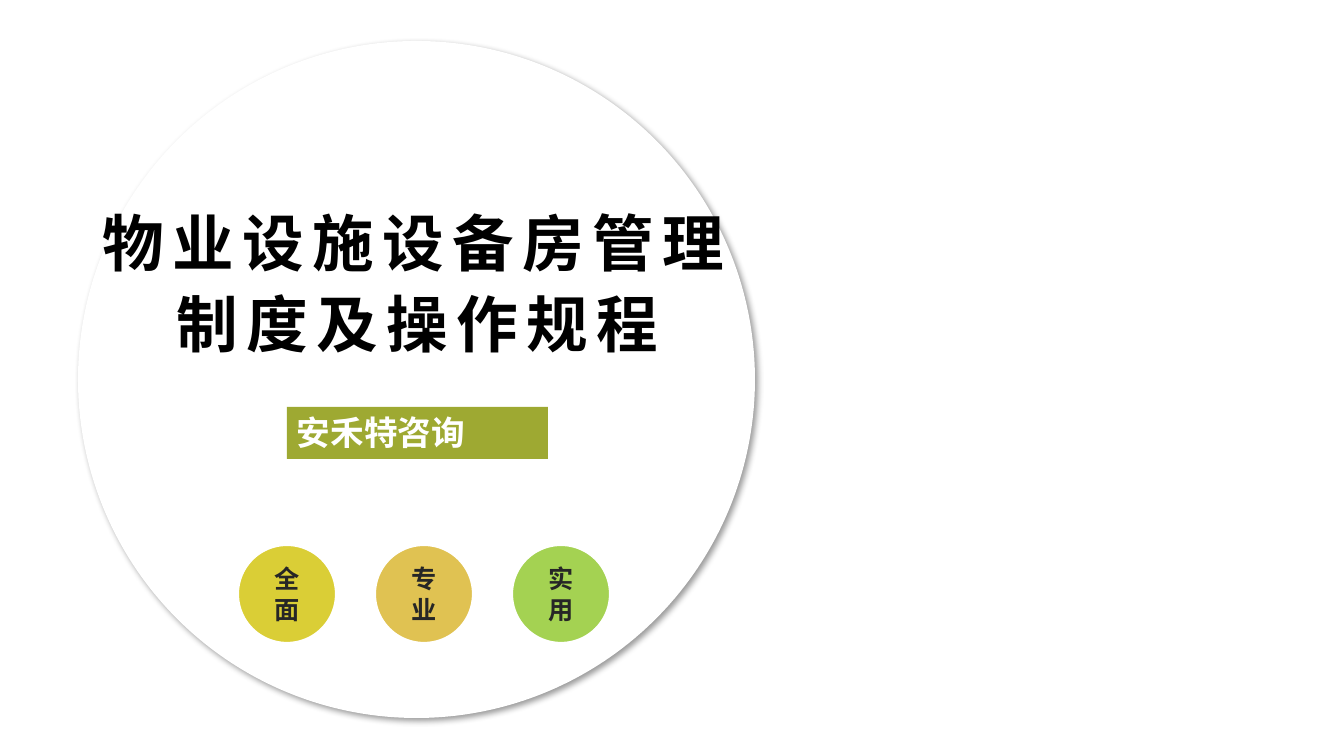
from lxml.etree import SubElement
from pptx import Presentation
from pptx.dml.color import RGBColor
from pptx.enum.shapes import MSO_SHAPE
from pptx.enum.text import MSO_ANCHOR, MSO_AUTO_SIZE, PP_ALIGN
from pptx.oxml.ns import qn
from pptx.util import Emu, Pt

WHITE = RGBColor(0xFF, 0xFF, 0xFF)
BLACK = RGBColor(0x00, 0x00, 0x00)
INK = RGBColor(0x26, 0x26, 0x26)
OLIVE = RGBColor(0x9E, 0xA9, 0x32)
YELLOW = RGBColor(0xDA, 0xCE, 0x36)
AMBER = RGBColor(0xE0, 0xC2, 0x52)
GREEN = RGBColor(0xA4, 0xD2, 0x52)

PX = 914400 / 100.8
WIDTH, HEIGHT = 1344, 756


def emu(px):
    return Emu(round(px * PX))


class Cover:
    head_font = "Noto Sans CJK JP"
    bar_font = "Noto Sans CJK SC"
    dot_font = "Arial"

    def __init__(self, deck):
        self.slide = deck.slides.add_slide(deck.slide_layouts[0])
        self.shapes = self.slide.shapes
        spare = self.slide.placeholders[1].element
        spare.getparent().remove(spare)

    def shape(self, kind, box, fill, line=None):
        shape = self.shapes.add_shape(kind, *map(emu, box))
        shape.shadow.inherit = False
        shape.fill.solid()
        shape.fill.fore_color.rgb = fill
        if line is None:
            shape.line.fill.background()
        else:
            shape.line.color.rgb = line
            shape.line.width = Pt(1.5)
        return shape

    def label(self, shape, text, name, size, color, align, anchor):
        frame = shape.text_frame
        frame.text = text
        frame.word_wrap = True
        frame.auto_size = MSO_AUTO_SIZE.NONE
        frame.vertical_anchor = anchor
        para = frame.paragraphs[0]
        para.alignment = align
        font = para.font
        font.name, font.size, font.bold = name, Pt(size), True
        font.color.rgb = color
        SubElement(font._rPr, qn("a:ea"), typeface=name)
        return para

    def disc(self, box):
        """Add the large white circle with its soft shadow."""
        disc = self.shape(MSO_SHAPE.OVAL, box, WHITE)
        effects = disc.element.spPr.find(qn("a:effectLst"))
        shade = SubElement(
            effects, qn("a:outerShdw"), blurRad=str(Pt(4)), dist=str(Pt(3)),
            dir=str(45 * 60000), algn="tl", rotWithShape="0")
        tone = SubElement(shade, qn("a:srgbClr"), val=str(BLACK))
        SubElement(tone, qn("a:alpha"), val="40000")

    def title(self, text, box):
        title = self.shapes.title
        title.left, title.top, title.width, title.height = map(emu, box)
        title.text_frame.margin_bottom = 0
        para = self.label(title, text, self.head_font, 44, BLACK,
                          PP_ALIGN.CENTER, MSO_ANCHOR.BOTTOM)
        para.line_spacing = 1.1
        para.font._rPr.set("spc", "600")
        self.shapes._spTree.append(title.element)  # in front of the disc

    def bar(self, text, box):
        bar = self.shape(MSO_SHAPE.RECTANGLE, box, OLIVE)
        self.label(bar, text, self.bar_font, 24, WHITE,
                   PP_ALIGN.JUSTIFY, MSO_ANCHOR.TOP)

    def dot(self, text, box, fill):
        dot = self.shape(MSO_SHAPE.OVAL, box, fill, WHITE)
        self.label(dot, text, self.dot_font, 18, INK,
                   PP_ALIGN.CENTER, MSO_ANCHOR.MIDDLE)


def main():
    deck = Presentation()
    deck.slide_width, deck.slide_height = emu(WIDTH), emu(HEIGHT)
    cover = Cover(deck)
    cover.disc((78, 41, 677, 677))
    cover.title("物业设施设备房管理制度及操作规程", (67, 184, 702, 176))
    cover.bar("安禾特咨询", (287, 407, 261, 52))
    traits = [("全面", YELLOW), ("专业", AMBER), ("实用", GREEN)]
    for i, (text, fill) in enumerate(traits):
        cover.dot(text, (238 + 137 * i, 545, 98, 98), fill)
    deck.save("out.pptx")


if __name__ == "__main__":
    main()
